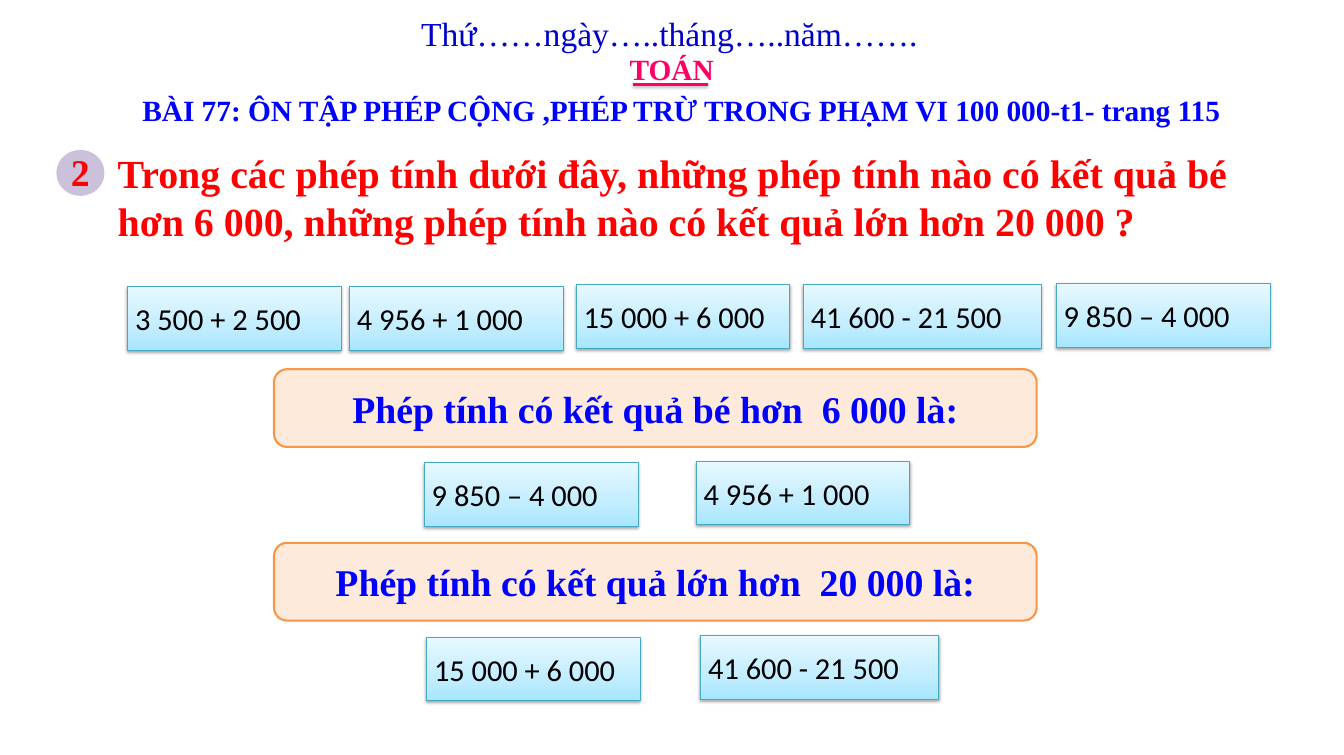
from pptx import Presentation
from pptx.dml.color import RGBColor
from pptx.enum import shapes, text
from pptx.oxml import parse_xml
from pptx.oxml.ns import nsdecls, qn
from pptx.util import Inches, Pt

NAVY = RGBColor(0x00, 0x00, 0xCC)
BLUE = RGBColor(0x00, 0x00, 0xFF)
PINK = RGBColor(0xFF, 0x00, 0x66)
RED = RGBColor(0xFF, 0x00, 0x00)
BLACK = RGBColor(0x00, 0x00, 0x00)
LILAC = RGBColor(0xCC, 0xC1, 0xDA)
TEAL = RGBColor(0x46, 0xAA, 0xC5)
PEACH = RGBColor(0xFD, 0xEA, 0xDA)
ORANGE = RGBColor(0xF7, 0x96, 0x46)
STOPS = [(0, RGBColor(0xA7, 0xE6, 0xFF)), (35, RGBColor(0xC1, 0xED, 0xFF)),
         (100, RGBColor(0xE7, 0xF8, 0xFF))]
SERIF = "Times New Roman"
LEFT, MID = text.PP_ALIGN.LEFT, text.PP_ALIGN.CENTER


def write(words, shape=None, at=None, size=28, color=BLUE, font=SERIF,
          bold=True, align=LEFT, wrap=True):
    """Put words in a shape, or in a new text box at the given place."""
    box = shape or slide.shapes.add_textbox(*map(Inches, at))
    frame = box.text_frame
    frame.word_wrap = wrap
    if shape:
        frame.vertical_anchor = text.MSO_ANCHOR.MIDDLE
    else:
        frame.auto_size = text.MSO_AUTO_SIZE.SHAPE_TO_FIT_TEXT
    para = frame.paragraphs[0]
    para.alignment = align
    run = para.add_run()
    run.text = words
    run.font.name, run.font.size = font, Pt(size)
    run.font.bold, run.font.color.rgb = bold, color
    return frame


def shade(shape):
    """Add a soft shadow below a shape or line whose fill and line are set."""
    shape._element.spPr.append(parse_xml(
        f'<a:effectLst {nsdecls("a")}>'
        '<a:outerShdw blurRad="40000" dist="20000" dir="5400000" rotWithShape="0">'
        '<a:srgbClr val="000000"><a:alpha val="38000"/></a:srgbClr>'
        '</a:outerShdw></a:effectLst>'))


deck = Presentation()
deck.slide_width, deck.slide_height = Inches(17.8), Inches(10)
slide = deck.slides.add_slide(deck.slide_layouts[6])

# Date and subject
write("Thứ……ngày…..tháng…..năm…….", at=(5.48, 0.12, 6.84, 0.64),
      size=32, color=NAVY, bold=False, wrap=False)
write("TOÁN", at=(8.24, 0.63, 1.33, 0.57), color=PINK, wrap=False)
rule = slide.shapes.add_connector(
    shapes.MSO_CONNECTOR.STRAIGHT,
    Inches(8.38), Inches(1.12), Inches(9.38), Inches(1.12))
rule.line.color.rgb, rule.line.width = PINK, Pt(2)
shade(rule)

# Question
disc = slide.shapes.add_shape(
    shapes.MSO_SHAPE.OVAL, Inches(0.76), Inches(2), Inches(0.61), Inches(0.58))
disc.shadow.inherit = False
disc.fill.solid()
disc.fill.fore_color.rgb = LILAC
disc.line.color.rgb, disc.line.width = LILAC, Pt(2)
write("2", at=(0.84, 1.92, 0.45, 0.71), size=36, color=RED, wrap=False)
write("Trong các phép tính dưới đây, những phép tính nào có kết quả bé "
      "hơn 6 000, những phép tính nào có kết quả lớn hơn 20 000 ?",
      at=(1.46, 1.92, 15.78, 1.38), size=38, color=RED)

# Sums: the five to sort, then the answers
sums = [
    ("3 500 + 2 500", 1.69, 3.8, 2.83),
    ("4 956 + 1 000", 4.63, 3.8, 2.83),
    ("15 000 + 6 000", 7.63, 3.77, 2.83),
    ("41 600 - 21 500", 10.64, 3.77, 3.15),
    ("9 850 – 4 000", 13.99, 3.76, 2.83),
    ("9 850 – 4 000", 5.62, 6.13, 2.83),
    ("4 956 + 1 000", 9.22, 6.11, 2.83),
    ("15 000 + 6 000", 5.65, 8.44, 2.83),
    ("41 600 - 21 500", 9.28, 8.42, 3.15),
]
for words, x, y, wide in sums:
    card = slide.shapes.add_shape(
        shapes.MSO_SHAPE.RECTANGLE, Inches(x), Inches(y), Inches(wide), Inches(0.84))
    card.fill.gradient()
    card.fill.gradient_angle = 90
    ramp = card._element.spPr.find(".//" + qn("a:gsLst"))
    for stop in list(ramp):
        ramp.remove(stop)
    for pos, tint in STOPS:
        ramp.append(parse_xml(
            f'<a:gs {nsdecls("a")} pos="{pos * 1000}"><a:srgbClr val="{tint}"/></a:gs>'))
    card.line.color.rgb, card.line.width = TEAL, Pt(0.75)
    shade(card)
    write(words, shape=card, size=29, color=BLACK, font="Calibri", bold=False)

# Headings of the two answer groups
for words, y in [("Phép tính có kết quả bé hơn  6 000 là:", 4.89),
                 ("Phép tính có kết quả lớn hơn  20 000 là:", 7.19)]:
    band = slide.shapes.add_shape(
        shapes.MSO_SHAPE.ROUNDED_RECTANGLE,
        Inches(3.63), Inches(y), Inches(10.1), Inches(1.03))
    band.shadow.inherit = False
    band.fill.solid()
    band.fill.fore_color.rgb = PEACH
    band.line.color.rgb, band.line.width = ORANGE, Pt(2)
    write(words, shape=band, size=36, align=MID)

# Lesson title
title = write("BÀI 77: ÔN TẬP PHÉP CỘNG ,PHÉP TRỪ TRONG PHẠM VI 100 000-t1- trang 115",
              at=(1.21, 1.14, 15.62, 0.63), align=MID)
title.margin_left = title.margin_right = Inches(0.16)
title.margin_top = title.margin_bottom = Inches(0.08)

deck.save("out.pptx")
